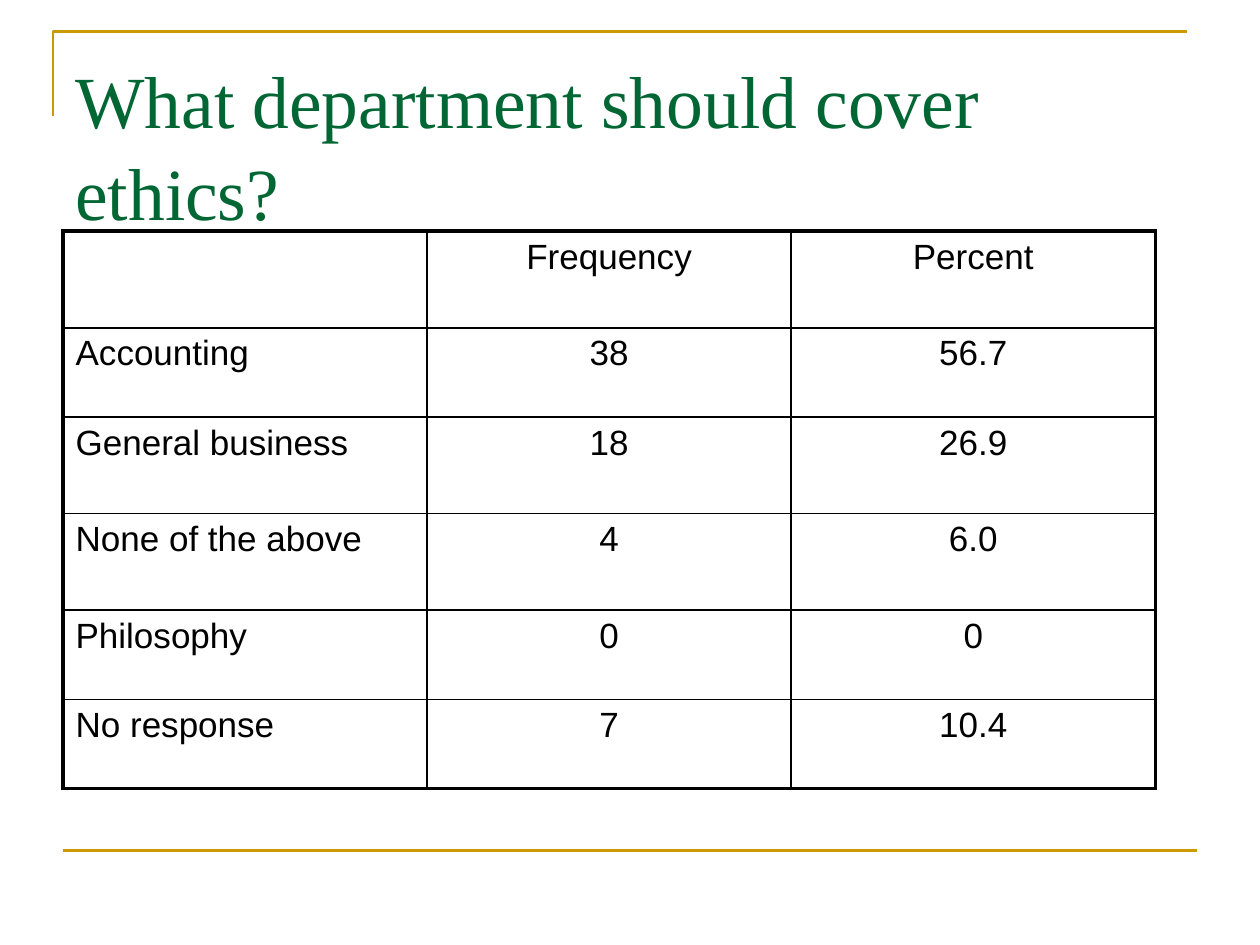
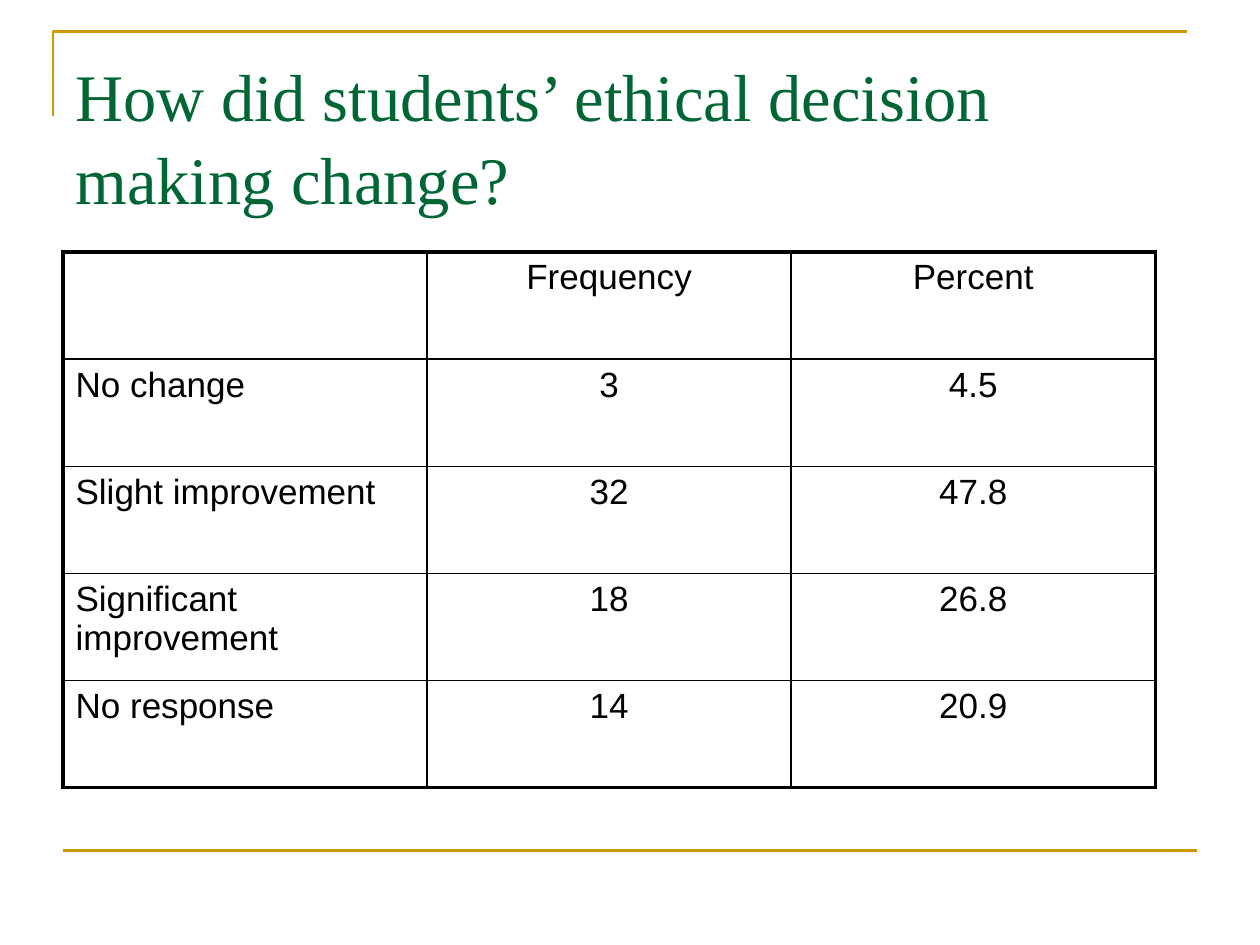
from lxml import etree
from pptx import Presentation
from pptx.dml.color import RGBColor
from pptx.enum.shapes import MSO_CONNECTOR
from pptx.enum.text import MSO_ANCHOR, PP_ALIGN
from pptx.oxml.ns import qn
from pptx.util import Cm, Pt

STRAIGHT = MSO_CONNECTOR.STRAIGHT
TOP = MSO_ANCHOR.TOP
LEFT, CENTER = PP_ALIGN.LEFT, PP_ALIGN.CENTER

HEADINGS = ("", "Frequency", "Percent")
DEPARTMENTS = [
    HEADINGS,
    ("Accounting", "38", "56.7"),
    ("General business", "18", "26.9"),
    ("None of the above", "4", "6.0"),
    ("Philosophy", "0", "0"),
    ("No response", "7", "10.4"),
]
CHANGES = [
    HEADINGS,
    ("No change", "3", "4.5"),
    ("Slight improvement", "32", "47.8"),
    ("Significant improvement", "18", "26.8"),
    ("No response", "14", "20.9"),
]


def rgb(value):
    return RGBColor.from_string(value)


class Deck:
    GOLD, GREEN, BLACK = "CC9900", "006633", "000000"
    TITLE_FONT, BODY_FONT = "Times New Roman", "Arial"
    THICK, THIN = 2.25, 1

    def __init__(self):
        self.prs = Presentation()
        self.prs.slide_width, self.prs.slide_height = Cm(25.4), Cm(19.05)

    def new_slide(self):
        self.s = self.prs.slides.add_slide(self.prs.slide_layouts[6])
        self.corner()
        self.footer_line()

    def style_line(self, line):
        line.color.rgb = rgb(self.GOLD)
        line.width = Pt(1.5)

    def corner(self):
        left, top, right, bottom = Cm(1.07), Cm(0.64), Cm(23.93), Cm(2.34)
        builder = self.s.shapes.build_freeform(left, bottom)
        builder.add_line_segments([(left, top), (right, top)], close=False)
        sp = builder.convert_to_shape()
        sp.shadow.inherit = False
        sp.fill.background()
        self.style_line(sp.line)

    def footer_line(self):
        y = Cm(17.15)
        line = self.s.shapes.add_connector(STRAIGHT, Cm(1.27), y, Cm(24.13), y)
        self.style_line(line.line)
        etree.SubElement(line._element.spPr, qn("a:effectLst"))

    def set_font(self, p, name, size, color):
        p.font.name, p.font.size = name, Pt(size)
        p.font.color.rgb = rgb(color)

    def title(self, text, size):
        sp = self.s.shapes.add_textbox(Cm(1.27), Cm(0.76), Cm(22.86), Cm(3.18))
        tf = sp.text_frame
        tf.word_wrap = True
        tf.vertical_anchor = TOP
        tf.margin_top = Cm(0.28)
        p = tf.paragraphs[0]
        p.text = text
        p.line_spacing = 1.04
        self.set_font(p, self.TITLE_FONT, size, self.GREEN)

    def border(self, cell, side, width):
        tc_pr = cell._tc.get_or_add_tcPr()
        ln = etree.SubElement(tc_pr, qn(f"a:ln{side}"), w=str(Pt(width)))
        fill = etree.SubElement(ln, qn("a:solidFill"))
        etree.SubElement(fill, qn("a:srgbClr"), val=self.BLACK)

    def table(self, rows, top, heights):
        n_rows, n_cols = len(rows), len(rows[0])
        col_width = Cm(7.34)
        frame = self.s.shapes.add_table(
            n_rows, n_cols, Cm(1.27), Cm(top), col_width * n_cols, Cm(sum(heights))
        )
        table = frame.table
        table.first_row = table.horz_banding = False
        for column in table.columns:
            column.width = col_width
        for i, (values, height) in enumerate(zip(rows, heights)):
            table.rows[i].height = Cm(height)
            for j, value in enumerate(values):
                cell = table.cell(i, j)
                outer = {
                    "L": j == 0,
                    "R": j == n_cols - 1,
                    "T": i == 0,
                    "B": i == n_rows - 1,
                }
                for side, is_outer in outer.items():
                    self.border(cell, side, self.THICK if is_outer else self.THIN)
                cell.fill.background()
                cell.vertical_anchor = TOP
                p = cell.text_frame.paragraphs[0]
                p.text = value
                p.alignment = CENTER if j else LEFT
                self.set_font(p, self.BODY_FONT, 20, self.BLACK)


def main():
    deck = Deck()

    deck.new_slide()
    deck.title("What department should cover ethics?", 42)
    deck.table(DEPARTMENTS, 4.66, [1.95, 1.8, 1.94, 1.95, 1.8, 1.8])

    deck.new_slide()
    deck.title("How did students’ ethical decision making change?", 38)
    deck.table(CHANGES, 5.08, [2.16] * len(CHANGES))

    deck.prs.save("out.pptx")


if __name__ == "__main__":
    main()
